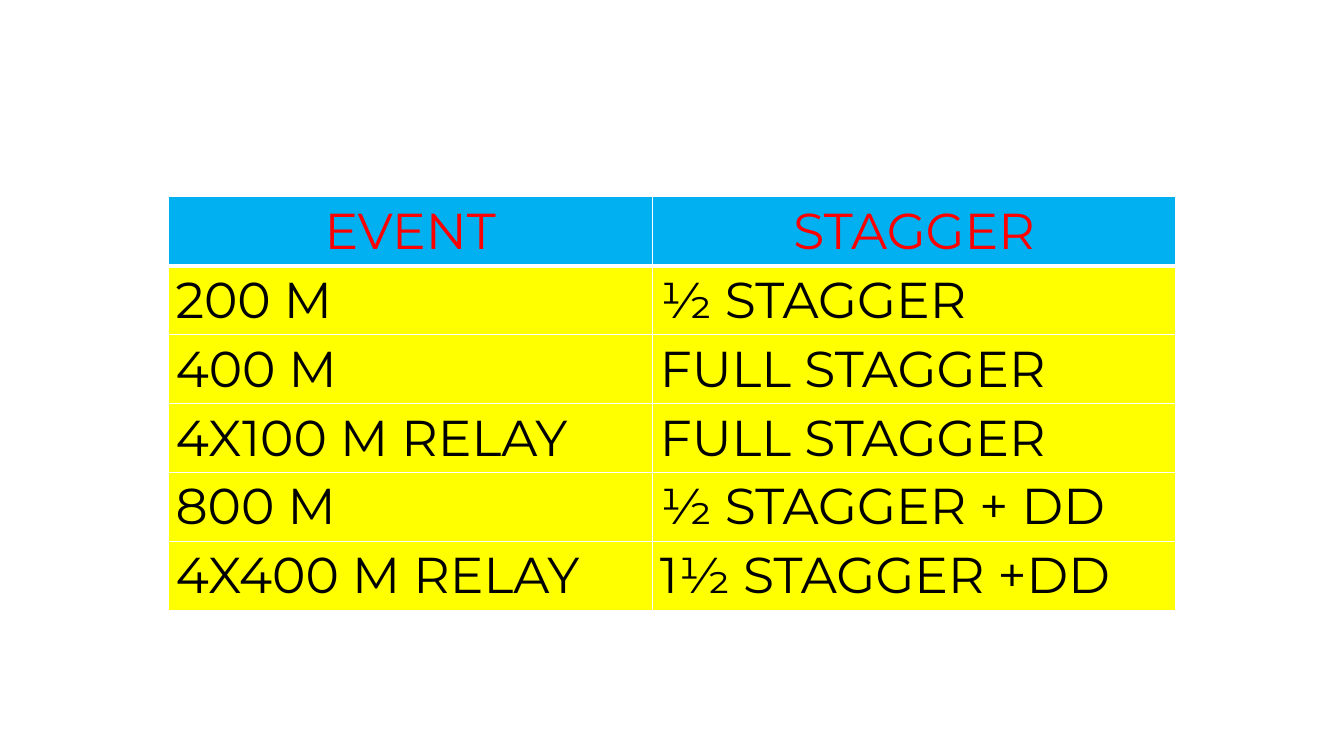
from dataclasses import dataclass

from lxml.etree import SubElement
from pptx import Presentation
from pptx.dml.color import RGBColor as RGB
from pptx.enum.text import PP_ALIGN as Align
from pptx.oxml.ns import qn
from pptx.table import _Cell as Cell
from pptx.util import Pt

COLORS = {
    "header": "00B0F0",
    "header_text": "FF0000",
    "body": "FFFF00",
    "body_text": "000000",
    "border": "FFFFFF",
}
FONT = "Montserrat"
FONT_SIZE = 36
LEFT, TOP = 120, 140.5
COLUMN_WIDTHS = (346, 374)
ROW_HEIGHT = 48.6
INSET_X, INSET_Y = 5.4, 2.7
HEADER_BORDERS = {"lnL": 1, "lnR": 1, "lnT": 1, "lnB": 3}


@dataclass(frozen=True)
class Row:
    event: str
    stagger: str
    is_header: bool = False


ROWS = (
    Row("EVENT", "STAGGER", is_header=True),
    Row("200 M", "½ STAGGER"),
    Row("400 M", "FULL STAGGER"),
    Row("4X100 M RELAY", "FULL STAGGER"),
    Row("800 M", "½ STAGGER + DD"),
    Row("4X400 M RELAY", "1½ STAGGER +DD"),
)


def add_header_borders(cell: Cell) -> None:
    """Draw the header's borders; call before filling, as lines precede fills."""
    tc_pr = cell._tc.get_or_add_tcPr()
    for side, width in HEADER_BORDERS.items():
        ln = SubElement(tc_pr, qn(f"a:{side}"), w=str(Pt(width)))
        fill = SubElement(ln, qn("a:solidFill"))
        SubElement(fill, qn("a:srgbClr"), val=COLORS["border"])


def write_cell(cell: Cell, text: str, is_header: bool) -> None:
    kind = "header" if is_header else "body"
    if is_header:
        add_header_borders(cell)
    cell.fill.solid()
    cell.fill.fore_color.rgb = RGB.from_string(COLORS[kind])
    cell.margin_left = cell.margin_right = Pt(INSET_X)
    cell.margin_top = cell.margin_bottom = Pt(INSET_Y)

    p = cell.text_frame.paragraphs[0]
    p.text = text
    p.alignment = Align.CENTER if is_header else Align.LEFT
    r = p.runs[0]
    r.font.name = FONT
    r.font.size = Pt(FONT_SIZE)
    r.font.bold = False
    r.font.color.rgb = RGB.from_string(COLORS[f"{kind}_text"])


def main() -> None:
    prs = Presentation()
    prs.slide_width, prs.slide_height = Pt(960), Pt(540)
    s = prs.slides.add_slide(prs.slide_layouts[6])
    table = s.shapes.add_table(
        len(ROWS), len(COLUMN_WIDTHS), Pt(LEFT), Pt(TOP),
        Pt(sum(COLUMN_WIDTHS)), Pt(ROW_HEIGHT * len(ROWS)),
    ).table
    for column, width in zip(table.columns, COLUMN_WIDTHS):
        column.width = Pt(width)
    for i, row in enumerate(ROWS):
        table.rows[i].height = Pt(ROW_HEIGHT)
        for j, text in enumerate((row.event, row.stagger)):
            write_cell(table.cell(i, j), text, row.is_header)
    prs.save("out.pptx")


if __name__ == "__main__":
    main()
